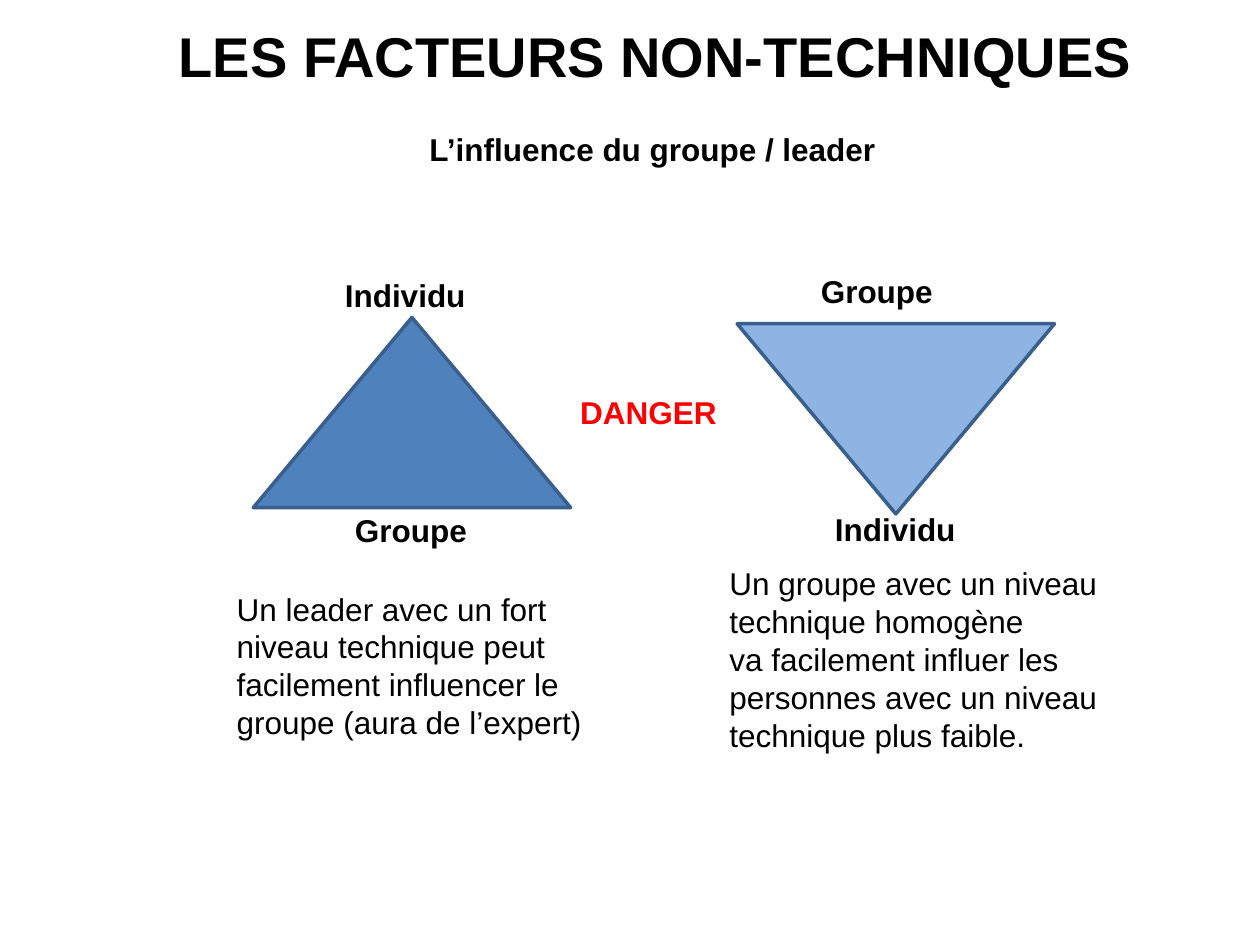
import pptx
import pptx.dml.color
import pptx.enum.shapes
import pptx.enum.text
import pptx.util

Pt = pptx.util.Pt


def rgb(value):
    return pptx.dml.color.RGBColor.from_string(value)


def add_text(left, top, width, height, lines, size=18, color="000000", bold=True, wrap=False, align="LEFT"):
    frame = slide.shapes.add_textbox(Pt(left), Pt(top), Pt(width), Pt(height)).text_frame
    frame.word_wrap = wrap
    frame.auto_size = pptx.enum.text.MSO_AUTO_SIZE.SHAPE_TO_FIT_TEXT
    for index, line in enumerate(lines):
        paragraph = frame.add_paragraph() if index else frame.paragraphs[0]
        paragraph.alignment = pptx.enum.text.PP_ALIGN[align]
        run = paragraph.add_run()
        run.text = line
        run.font.name = "Arial"
        run.font.size = Pt(size)
        run.font.bold = bold
        run.font.color.rgb = rgb(color)


presentation = pptx.Presentation()
presentation.slide_width = Pt(720)
presentation.slide_height = Pt(540)
slide = presentation.slides.add_slide(presentation.slide_layouts[6])

add_text(54, 8.6, 641, 46, ["LES FACTEURS NON-TECHNIQUES"], size=32, wrap=True, align="CENTER")
add_text(238.3, 70.6, 272.2, 29, ["L’influence du groupe / leader"])

for left, top, rotation, fill in [(144.7, 181.4, 0, "4F81BD"), (421.2, 185, 180, "8EB4E3")]:
    triangle = slide.shapes.add_shape(
        pptx.enum.shapes.MSO_SHAPE.ISOSCELES_TRIANGLE, Pt(left), Pt(top), Pt(181.4), Pt(108.7))
    triangle.rotation = rotation
    triangle.shadow.inherit = False
    triangle.fill.solid()
    triangle.fill.fore_color.rgb = rgb(fill)
    triangle.line.color.rgb = rgb("3A5F8C")
    triangle.line.width = Pt(2)

leader_effect = ["Un leader avec un fort niveau technique peut facilement influencer le groupe (aura de l’expert)"]
group_effect = [
    "Un groupe avec un niveau technique homogène",
    "va facilement influer les personnes avec un niveau technique plus faible.",
]
add_text(128.2, 333.4, 213.8, 94.3, leader_effect, bold=False, wrap=True)
add_text(409.7, 319, 252, 116.6, group_effect, bold=False, wrap=True)

for label, left, top, width in [
    ("Individu", 190, 154, 84.2),
    ("Individu", 470, 288, 84.2),
    ("Groupe", 462, 152, 79.2),
    ("Groupe", 195.8, 288.7, 79.2),
]:
    add_text(left, top, width, 29, [label])

add_text(324.5, 221, 93.6, 29, ["DANGER"], color="FF0000")

presentation.save("out.pptx")
